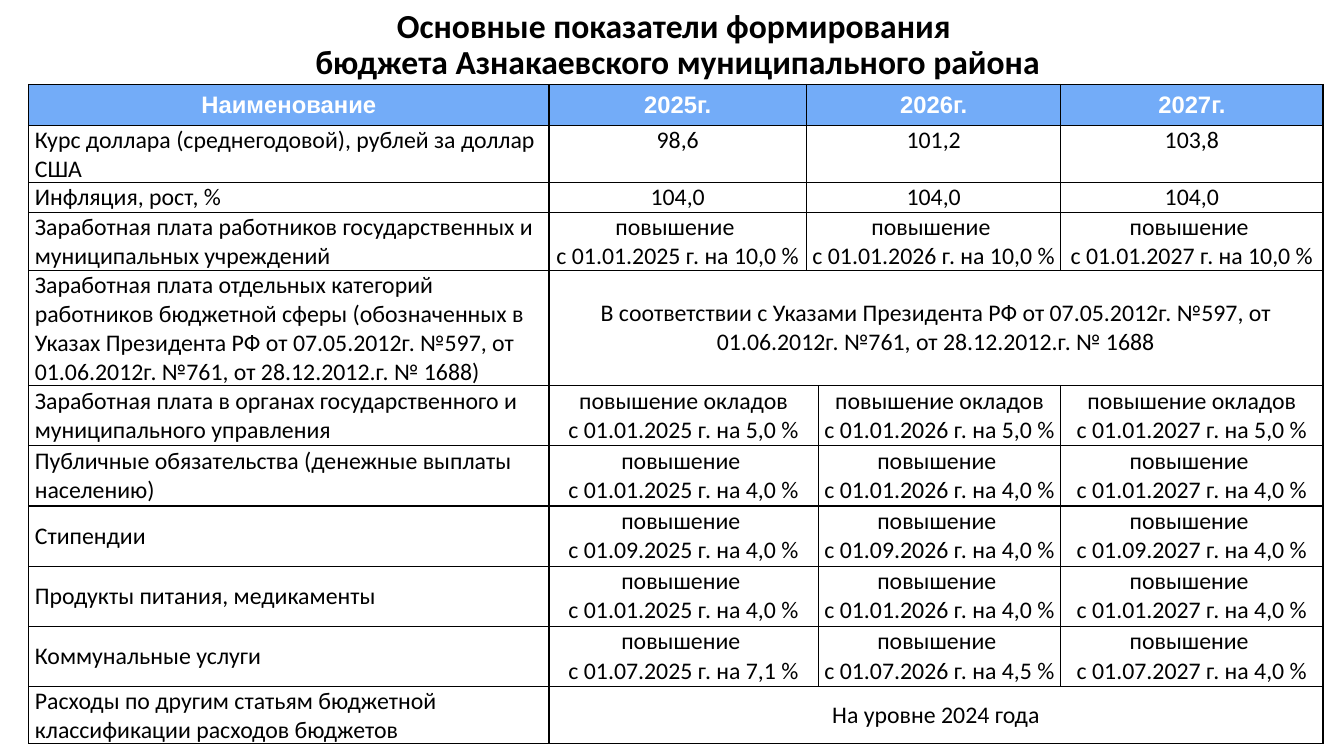
from lxml.etree import SubElement
from pptx import Presentation
from pptx.dml.color import RGBColor
from pptx.enum.text import MSO_ANCHOR as Anchor, MSO_AUTO_SIZE as AutoSize, PP_ALIGN as Align
from pptx.oxml.ns import qn
from pptx.util import Pt

BLACK = RGBColor(0x00, 0x00, 0x00)
WHITE = RGBColor(0xFF, 0xFF, 0xFF)
HEADER_BLUE = RGBColor(0x73, 0xAC, 0xF8)

YEARS = (2025, 2026, 2027)
COLUMN_WIDTHS = (371.5, 184, 8.4, 173.3, 187.2)
ROW_HEIGHTS = (29.2, 41, 21.4, 41.5, 82, 43, 43, 43, 43, 43, 41)

# First and last column of each value; the narrow column 2 joins either neighbour
NARROW_2025 = ((1, 1), (2, 3), (4, 4))
WIDE_2025 = ((1, 2), (3, 3), (4, 4))
ALL_YEARS = ((1, 4),)


def yearly_rise(word, day, *percents):
    return [f"{word}\nс {day}.{year} г. на {percent} %" for year, percent in zip(YEARS, percents)]


ROWS = [
    ("Наименование", NARROW_2025, [f"{year}г." for year in YEARS]),
    ("Курс доллара (среднегодовой), рублей за доллар США", NARROW_2025,
     ["98,6", "101,2", "103,8"]),
    ("Инфляция, рост, %", NARROW_2025, ["104,0", "104,0", "104,0"]),
    ("Заработная плата работников государственных и муниципальных учреждений", NARROW_2025,
     yearly_rise("повышение ", "01.01", "10,0", "10,0", "10,0")),
    ("Заработная плата отдельных категорий работников бюджетной сферы (обозначенных в Указах "
     "Президента РФ от 07.05.2012г. №597, от 01.06.2012г. №761, от 28.12.2012.г. № 1688)", ALL_YEARS,
     ["В соответствии с Указами Президента РФ от 07.05.2012г. №597, от 01.06.2012г. №761, "
      "от 28.12.2012.г. № 1688"]),
    ("Заработная плата в органах государственного и муниципального управления", WIDE_2025,
     yearly_rise("повышение окладов", "01.01", "5,0", "5,0", "5,0")),
    ("Публичные обязательства (денежные выплаты населению)", WIDE_2025,
     yearly_rise("повышение ", "01.01", "4,0", "4,0", "4,0")),
    ("Стипендии", WIDE_2025, yearly_rise("повышение ", "01.09", "4,0", "4,0", "4,0")),
    ("Продукты питания, медикаменты", WIDE_2025,
     yearly_rise("повышение ", "01.01", "4,0", "4,0", "4,0")),
    ("Коммунальные услуги", WIDE_2025, yearly_rise("повышение ", "01.07", "7,1", "4,5", "4,0")),
    ("Расходы по другим статьям бюджетной классификации расходов бюджетов", ALL_YEARS,
     ["На уровне 2024 года"]),
]


def add_borders(cell):
    properties = cell._tc.get_or_add_tcPr()
    for side in ("a:lnL", "a:lnR", "a:lnT", "a:lnB"):
        line = SubElement(properties, qn(side), w=str(Pt(1)))
        fill = SubElement(line, qn("a:solidFill"))
        SubElement(fill, qn("a:srgbClr"), val=str(BLACK))


presentation = Presentation()
presentation.slide_width = Pt(960)
presentation.slide_height = Pt(540)
slide = presentation.slides.add_slide(presentation.slide_layouts[6])

# Title
title = slide.shapes.add_textbox(Pt(108.7), Pt(3.2), Pt(745.2), Pt(60)).text_frame
title.word_wrap = True
title.auto_size = AutoSize.SHAPE_TO_FIT_TEXT
title.text = "Основные показатели формирования\n бюджета Азнакаевского муниципального района"
for paragraph in title.paragraphs:
    paragraph.alignment = Align.CENTER
    paragraph.line_spacing = 0.9
    paragraph.font.name = "Calibri"
    paragraph.font.size = Pt(24)
    paragraph.font.bold = True
    paragraph.font.color.rgb = BLACK

# Table of indicators
table = slide.shapes.add_table(
    len(ROWS), len(COLUMN_WIDTHS), Pt(20.6), Pt(60.4),
    Pt(sum(COLUMN_WIDTHS)), Pt(sum(ROW_HEIGHTS))).table
table.first_row = False
table.horz_banding = False
for column, width in zip(table.columns, COLUMN_WIDTHS):
    column.width = Pt(width)
for row, height in zip(table.rows, ROW_HEIGHTS):
    row.height = Pt(height)

for row_index, (indicator, spans, values) in enumerate(ROWS):
    is_header = row_index == 0
    for column_index in range(len(COLUMN_WIDTHS)):
        cell = table.cell(row_index, column_index)
        add_borders(cell)
        if is_header:
            cell.fill.solid()
            cell.fill.fore_color.rgb = HEADER_BLUE
        else:
            cell.fill.background()

    for (first, last), text in zip(((0, 0), *spans), (indicator, *values)):
        cell = table.cell(row_index, first)
        if last > first:
            cell.merge(table.cell(row_index, last))
        is_plain_number = row_index in (1, 2) and first > 0
        cell.vertical_anchor = Anchor.TOP if is_plain_number else Anchor.MIDDLE
        cell.margin_left = cell.margin_right = Pt(4 if first > 0 else 4.3)
        cell.margin_top = cell.margin_bottom = 0
        cell.text = text
        for paragraph in cell.text_frame.paragraphs:
            paragraph.alignment = Align.CENTER if is_header or first > 0 else Align.LEFT
            paragraph.space_after = Pt(10 if is_header else 0)
            paragraph.font.name = "Arial" if is_header else "Calibri"
            paragraph.font.size = Pt(17)
            paragraph.font.bold = is_header
            paragraph.font.color.rgb = WHITE if is_header else BLACK

presentation.save("out.pptx")
